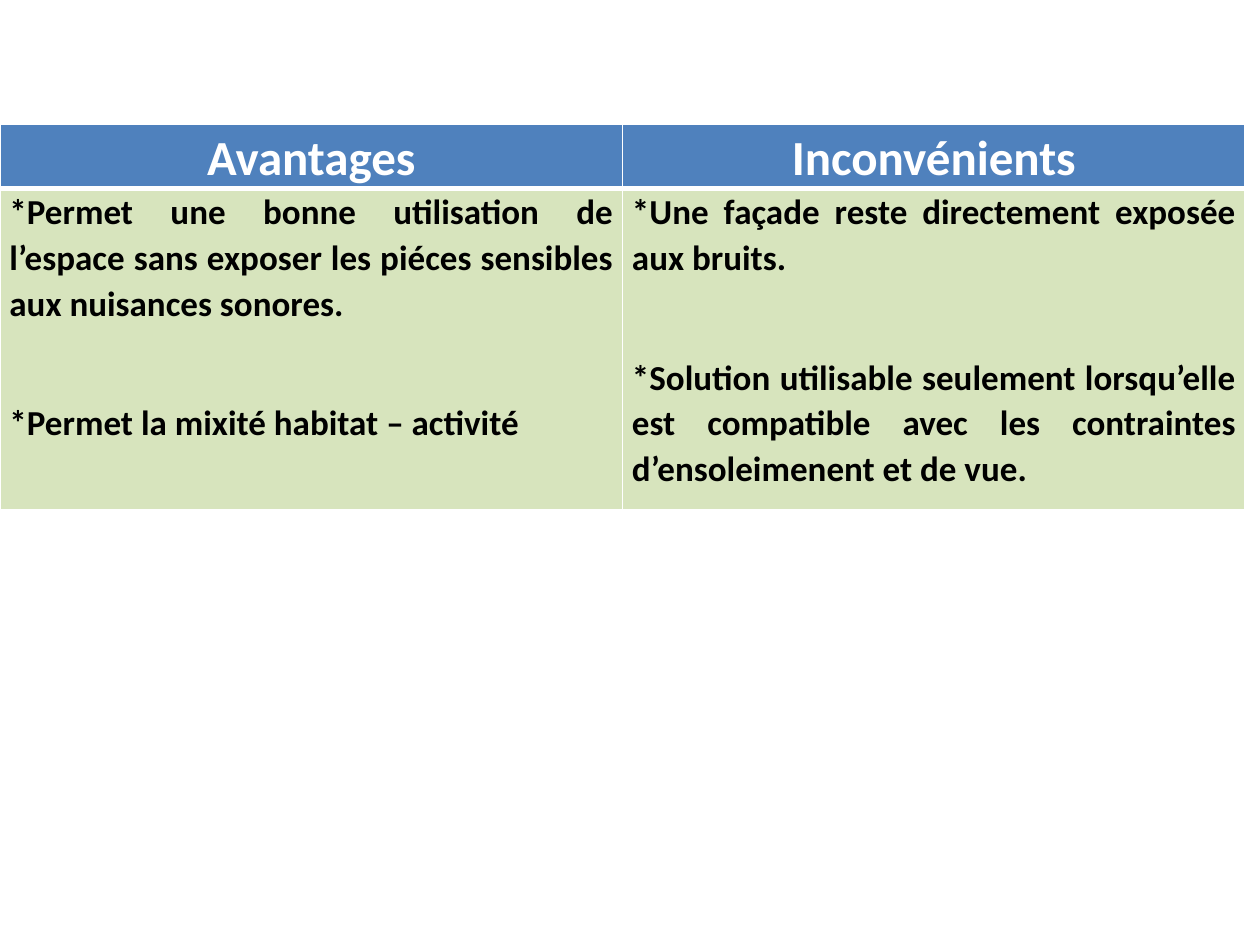
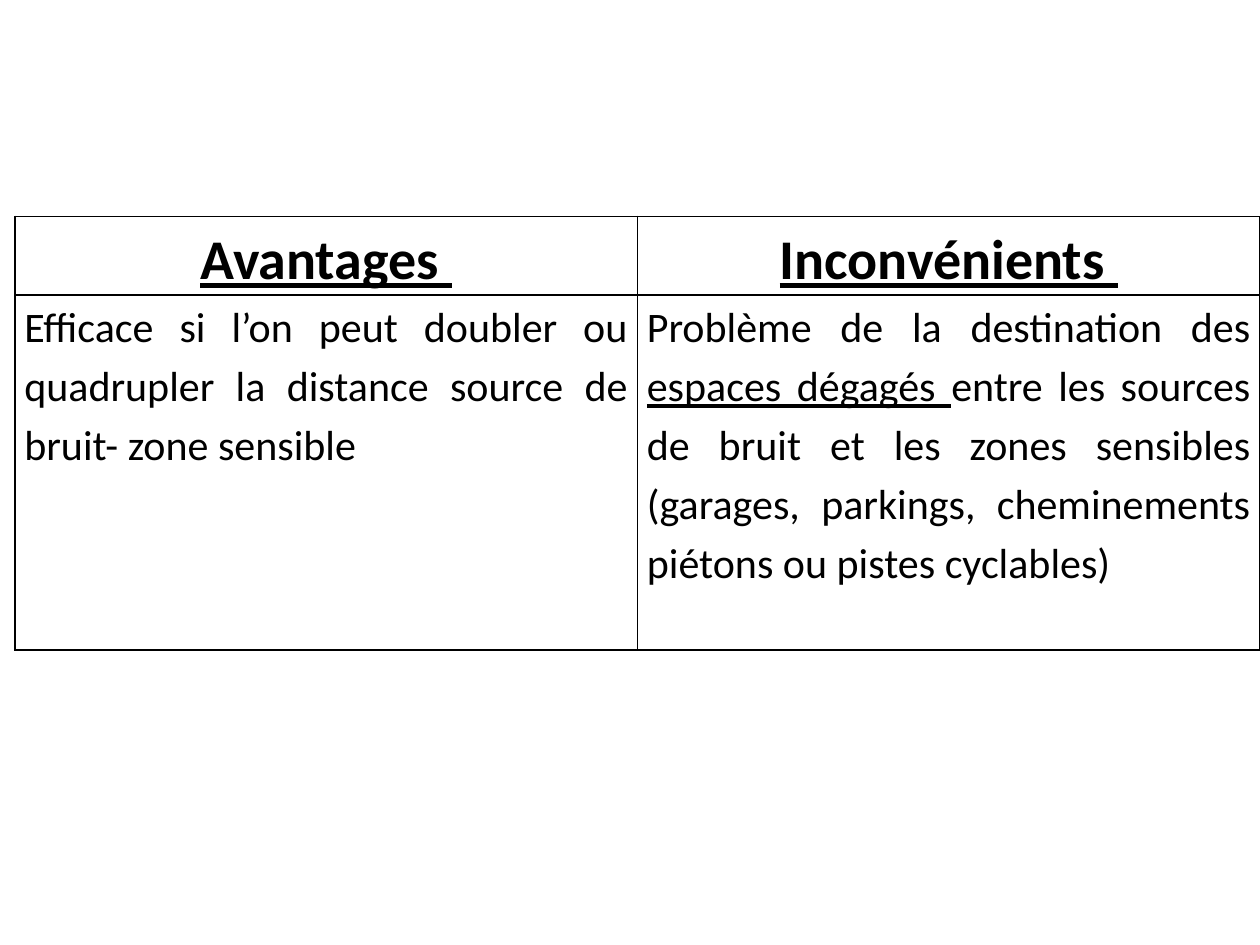
"""Build two slides that weigh the pros and cons of noise protection layouts."""
from lxml import etree
from pptx import Presentation
from pptx.dml.color import RGBColor
from pptx.enum.text import PP_ALIGN
from pptx.oxml.ns import qn
from pptx.util import Cm, Pt

MID, JUST = PP_ALIGN.CENTER, PP_ALIGN.JUSTIFY
WHITE = RGBColor(0xFF, 0xFF, 0xFF)
BLACK = RGBColor(0, 0, 0)
BLUE = RGBColor(0x4F, 0x81, 0xBD)
GREEN = RGBColor(0xD7, 0xE4, 0xBD)
FONT = "Calibri"
WIDTH = Cm(12.55)


def write(cell, text, size, color, bold, align, space, after, gap, lines=()):
    """Fill a cell with paragraphs, underlining the given parts."""
    frame = cell.text_frame
    for i, line in enumerate(text):
        para = frame.paragraphs[0] if i == 0 else frame.add_paragraph()
        para.alignment = align
        para.line_spacing = space
        para.space_after = Pt(after if i == len(text) - 1 else gap)
        for part in line:
            run = para.add_run()
            run.text = part
            font = run.font
            font.name, font.size, font.bold = FONT, Pt(size), bold
            font.underline = part in lines
            font.color.rgb = color


def edge(cell, color, sides):
    """Draw the borders of a cell, with a width in points for each side."""
    props = cell._tc.get_or_add_tcPr()
    for side, width in sides.items():
        line = etree.SubElement(props, qn(f"a:ln{side}"), w=str(Pt(width)))
        fill = etree.SubElement(line, qn("a:solidFill"))
        etree.SubElement(fill, qn("a:srgbClr"), val=str(color))


PLANS = [
    dict(
        left=0, top=2.51, rows=(1.12, 6.48), rule=WHITE, thick=3, fills=(BLUE, GREEN),
        space=1.07, after=8, gap=42, lines=(),
        looks=(dict(size=28, color=WHITE, bold=True, align=MID),
               dict(size=20, color=BLACK, bold=True, align=JUST)),
        cells=(
            ([["Avantages"]], [["Inconvénients"]]),
            ([["*Permet une bonne utilisation de l’espace sans exposer "
               "les piéces sensibles aux nuisances sonores."],
              ["*Permet la mixité habitat – activité "]],
             [["*Une façade reste directement exposée aux bruits."],
              ["*Solution utilisable seulement lorsqu’elle est compatible "
               "avec les contraintes d’ensoleimenent et de vue."]]),
        ),
    ),
    dict(
        left=0.3, top=4.36, rows=(1.59, 7.15), rule=BLACK, thick=1, fills=(None, None),
        space=1.15, after=0, gap=0,
        lines=("Avantages ", "Inconvénients ", "espaces dégagés "),
        looks=(dict(size=32, color=BLACK, bold=True, align=MID),
               dict(size=24, color=BLACK, bold=False, align=JUST)),
        cells=(
            ([["Avantages "]], [["Inconvénients "]]),
            ([["Efficace si l’on peut doubler ou quadrupler la distance "
               "source de bruit- zone sensible"]],
             [["Problème de la destination des ", "espaces dégagés ",
               "entre les sources de bruit et les zones sensibles (garages, "
               "parkings, cheminements piétons ou pistes cyclables)"]]),
        ),
    ),
]

deck = Presentation()
deck.slide_width, deck.slide_height = Cm(25.4), Cm(19.05)

for plan in PLANS:
    slide = deck.slides.add_slide(deck.slide_layouts[6])
    table = slide.shapes.add_table(2, 2, Cm(plan["left"]), Cm(plan["top"]),
                                   2 * WIDTH, Cm(sum(plan["rows"]))).table
    table.first_row = table.horz_banding = False
    for col in table.columns:
        col.width = WIDTH
    for r, high in enumerate(plan["rows"]):
        table.rows[r].height = Cm(high)
        sides = dict(L=1, R=1, T=1, B=1)
        sides["TB"[r == 0]] = plan["thick"]
        for c, text in enumerate(plan["cells"][r]):
            cell = table.cell(r, c)
            cell.margin_left = cell.margin_right = Cm(0.19)
            cell.margin_top = cell.margin_bottom = 0
            edge(cell, plan["rule"], sides)
            if plan["fills"][r]:
                cell.fill.solid()
                cell.fill.fore_color.rgb = plan["fills"][r]
            else:
                cell.fill.background()
            write(cell, text, space=plan["space"], after=plan["after"],
                  gap=plan["gap"], lines=plan["lines"], **plan["looks"][r])

deck.save("out.pptx")
